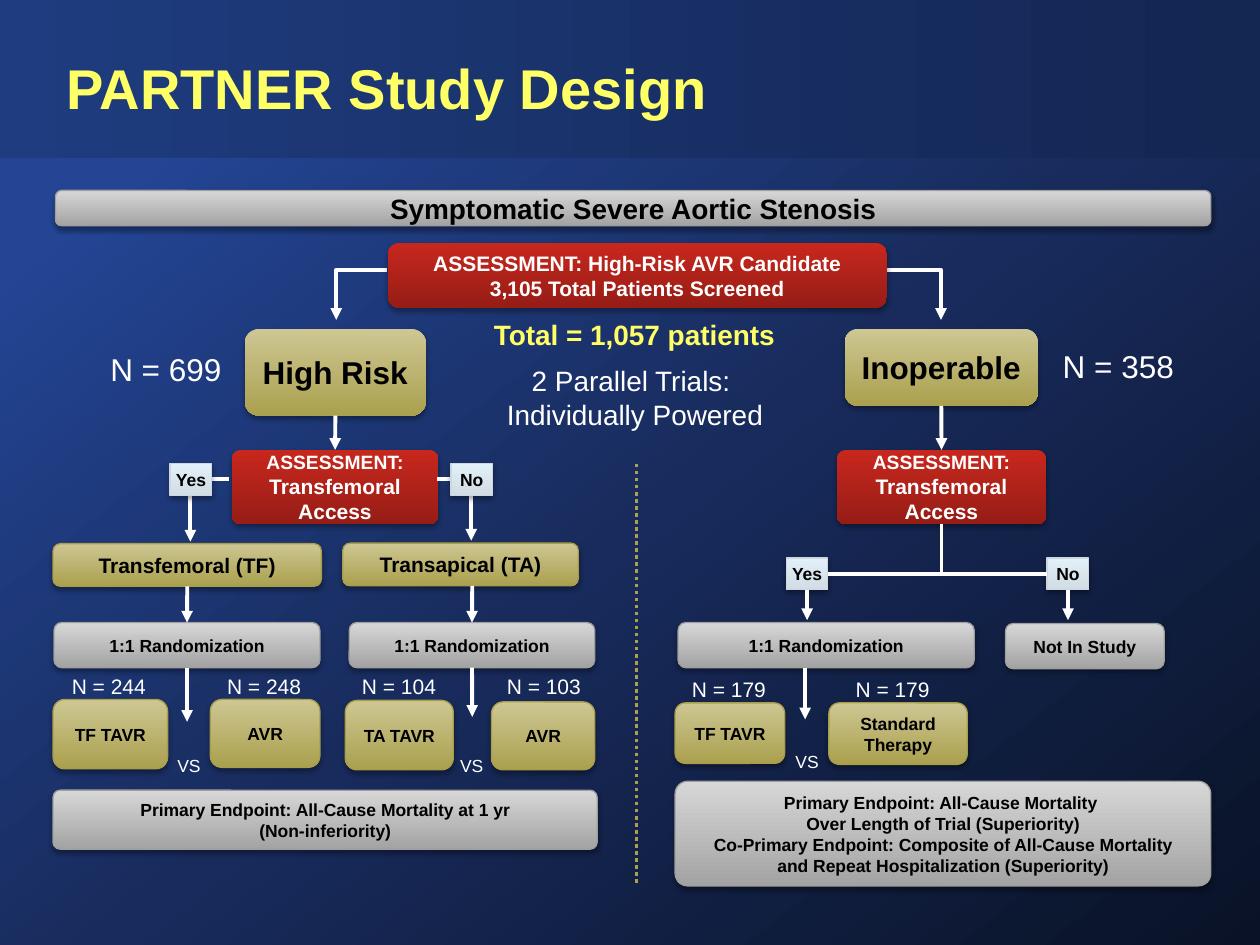
from lxml import etree
from pptx import Presentation
from pptx.dml.color import RGBColor
from pptx.enum import dml, shapes, text
from pptx.oxml.ns import qn
from pptx.util import Cm, Pt

COLORS = {
    "white": "FFFFFF", "black": "000000", "yellow": "FFFF66", "dots": "AAA04E",
    "gold_line": "A89E4A", "gray_line": "9F9F9F", "tag_line": "CED7DD",
}
# Gradient stops: position in percent, colour
GRADIENTS = {
    "back": [(14, "234594"), (53, "182B5C"), (100, "091226")],
    "band": [(0, "1E3C7F"), (100, "142652")],
    "gold": [(0, "CEC793"), (100, "AAA04E")],
    "gray": [(0, "D7D7D7"), (100, "A3A3A3")],
    "red": [(0, "C8271D"), (100, "961D16")],
    "tag": [(0, "E2F0F9"), (100, "D1DCE4")],
}
TOP, LEFT, BOTTOM, RIGHT = 0, 1, 2, 3


def rgb(name):
    return RGBColor.from_string(COLORS[name])


def sub(parent, tag, **attrs):
    return etree.SubElement(parent, qn(tag), {k: str(v) for k, v in attrs.items()})


class FlowSlide:
    font = "Arial"

    def __init__(self, slide):
        self.slide = slide

    def gradient(self, fill, owner, name, angle):
        fill.gradient()
        stops = next(owner.iter(qn("a:gsLst")))
        for old in list(stops):
            stops.remove(old)
        for pos, color in GRADIENTS[name]:
            sub(sub(stops, "a:gs", pos=pos * 1000), "a:srgbClr", val=color)
        next(owner.iter(qn("a:lin"))).set("ang", str(angle * 60000))

    def background(self):
        self.gradient(self.slide.background.fill, self.slide.element, "back", 52)
        sp = self.slide.shapes.add_shape(
            shapes.MSO_SHAPE.RECTANGLE, 0, 0, Cm(25.4), Cm(3.18))
        sp.shadow.inherit = False
        sp.line.fill.background()
        self.gradient(sp.fill, sp.element, "band", 0)
        self.slide.shapes.element.insert(2, sp.element)

    def style(self, p, size, color, bold):
        p.font.name, p.font.size, p.font.bold = self.font, Pt(size), bold
        p.font.color.rgb = rgb(color)

    def title(self, words, at):
        sp = self.slide.shapes.title
        sp.left, sp.top, sp.width, sp.height = map(Cm, at)
        tf = sp.text_frame
        tf.text = words
        tf.vertical_anchor = text.MSO_ANCHOR.MIDDLE
        p = tf.paragraphs[0]
        p.alignment, p.line_spacing = text.PP_ALIGN.LEFT, Pt(30)
        self.style(p, 32, "yellow", True)

    def set_text(self, sp, words, size, color, bold, side=0.25, lead=None):
        tf = sp.text_frame
        tf.word_wrap = True
        tf.vertical_anchor = text.MSO_ANCHOR.MIDDLE
        tf.margin_left = tf.margin_right = Cm(side)
        tf.text = words
        for p in tf.paragraphs:
            p.alignment = text.PP_ALIGN.CENTER
            self.style(p, size, color, bold)
        if lead:
            p = tf.paragraphs[0]
            p.runs[0].text, p.runs[0].font.size = lead
            p.add_run().text = words

    def box(self, words, at, fill, size=10, line=True, adj=0.17, side=0.25, lead=None):
        tag = fill == "tag"
        kind = shapes.MSO_SHAPE.RECTANGLE if tag else shapes.MSO_SHAPE.ROUNDED_RECTANGLE
        sp = self.slide.shapes.add_shape(kind, *map(Cm, at))
        if not tag:
            sp.adjustments[0] = adj
        self.gradient(sp.fill, sp.element, fill, 90)
        if line:
            sp.line.color.rgb, sp.line.width = rgb(fill + "_line"), Pt(0.75)
        else:
            sp.line.fill.background()
        sp.shadow.inherit = False
        shadow = sub(sp.element.spPr.find(qn("a:effectLst")), "a:outerShdw",
                     blurRad=Pt(3.1), dist=Pt(1.8), dir=5400000, rotWithShape=0)
        sub(sub(shadow, "a:srgbClr", val=COLORS["black"]), "a:alpha", val=35000)
        self.set_text(sp, words, size, "white" if fill == "red" else "black", True, side, lead)
        return sp

    def label(self, words, at, size=12, color="white", bold=False, side=0.25):
        sp = self.slide.shapes.add_textbox(*map(Cm, at))
        self.set_text(sp, words, size, color, bold, side)

    def line(self, points, start=None, end=None, arrow=True, bent=False,
             color="white", width=2.25, dash=None):
        kind = shapes.MSO_CONNECTOR.ELBOW if bent else shapes.MSO_CONNECTOR.STRAIGHT
        c = self.slide.shapes.add_connector(kind, *map(Cm, points))
        if bent:
            c.element.spPr.find(qn("a:prstGeom")).set("prst", "bentConnector2")
        if start:
            c.begin_connect(*start)
        if end:
            c.end_connect(*end)
        c.line.color.rgb, c.line.width = rgb(color), Pt(width)
        if dash:
            c.line.dash_style = dash
        if arrow:
            sub(c.get_or_add_ln(), "a:tailEnd", type="triangle")
        sub(c.element.spPr, "a:effectLst")


def main():
    prs = Presentation()
    prs.slide_width, prs.slide_height = Cm(25.4), Cm(19.05)
    s = FlowSlide(prs.slides.add_slide(prs.slide_layouts[5]))
    s.background()
    s.title("PARTNER Study Design", (1.09, 0.58, 17.7, 2.64))

    # Screening
    s.box("Symptomatic Severe Aortic Stenosis", (1.12, 3.84, 23.29, 0.71), "gray", 16)
    s.line((17.07, 5.44, 18.97, 6.45), bent=True)
    s.line((7.8, 5.44, 6.78, 6.45), bent=True)
    s.box("ASSESSMENT: High-Risk AVR Candidate\n3,105 Total Patients Screened",
          (7.82, 4.9, 10.06, 1.3), "red", 12, line=False)
    s.label("Total = 1,057 patients", (7.8, 6.22, 9.98, 1.04), 16, "yellow", True)
    s.label("2 Parallel Trials: \vIndividually Powered", (8.99, 7.34, 7.62, 1.35), 16)

    # Two cohorts and their access assessment
    access = []
    for name, at, left, width in (
            ("High Risk", (4.93, 6.63, 3.66, 1.75), 4.67, 4.17),
            ("Inoperable", (17.03, 6.63, 3.89, 1.55), 16.87, 4.22)):
        cohort = s.box(name, at, "gold", 18, line=False)
        access.append(s.box("Transfemoral Access", (left, 9.07, width, 1.5), "red", 12,
                            line=False, adj=0.12, lead=("ASSESSMENT: ", Pt(11))))
        s.line((0, 0, 0, 0), (cohort, BOTTOM), (access[-1], TOP))
    s.label("N = 699", (1.35, 6.86, 3.99, 1.14), 18)
    s.label("N = 358", (20.83, 6.81, 3.43, 1.14), 18)
    s.line((12.83, 9.35, 12.83, 17.83), arrow=False, color="dots", width=2,
           dash=dml.MSO_LINE.ROUND_DOT)

    # High-risk branches
    s.line((8.81, 9.65, 9.5, 10.9), bent=True)
    s.line((4.62, 9.65, 3.84, 10.92), bent=True)
    tf_arm = s.box("Transfemoral (TF)", (1.07, 10.96, 5.41, 0.86), "gold", 12)
    s.box("Transapical (TA)", (6.91, 10.95, 4.75, 0.86), "gold", 12)
    tf_random, ta_random, _ = [
        s.box("1:1 Randomization", (left, 12.55, width, 0.91), "gray")
        for left, width in ((1.09, 5.36), (7.04, 4.95), (13.67, 5.97))]
    s.line((0, 0, 0, 0), (tf_arm, BOTTOM), (tf_random, TOP))
    s.line((9.52, 11.81, 9.52, 12.55), end=(ta_random, TOP))
    s.line((3.77, 13.46, 3.77, 14.55), (tf_random, BOTTOM))
    s.line((9.52, 13.46, 9.52, 14.45), (ta_random, BOTTOM))

    # Inoperable branches
    s.box("Not In Study", (20.27, 12.57, 3.2, 0.91), "gray")
    s.line((18.98, 10.57, 18.98, 11.53), (access[1], BOTTOM), arrow=False)
    s.line((16.23, 13.46, 16.23, 14.5))

    # Yes / No tags
    tags = [s.box(words, (left, top, 0.84, 0.64), "tag", side=0)
            for words, left, top in (("Yes", 3.43, 9.35), ("No", 9.09, 9.35),
                                     ("Yes", 15.85, 11.25), ("No", 21.11, 11.25))]
    yes, no = tags[2:]
    s.line((0, 0, 0, 0), (yes, RIGHT), (no, LEFT), arrow=False)
    for tag, x in ((yes, 16.27), (no, 21.53)):
        s.line((x, 11.89, x, 12.5), (tag, BOTTOM))

    # Treatment arms
    for words, left, top, width, height in (
            ("TF TAVR", 1.07, 14.1, 2.31, 1.4), ("AVR", 4.24, 14.1, 2.21, 1.37),
            ("TA TAVR", 6.96, 14.12, 2.18, 1.4), ("AVR", 9.91, 14.15, 2.08, 1.37),
            ("TF TAVR", 13.61, 14.17, 2.21, 1.22),
            ("Standard\nTherapy", 16.71, 14.17, 2.79, 1.24)):
        s.box(words, (left, top, width, height), "gold", side=0.1)
    for count, left, top in ((244, 0.2, 13.41), (248, 3.33, 13.41), (104, 6.05, 13.41),
                             (103, 8.97, 13.41), (179, 12.7, 13.46), (179, 16, 13.46)):
        s.label(f"N = {count}", (left, top, 3.99, 0.86))
    for left, top in ((3.31, 15.04), (9.01, 15.04), (15.77, 14.96)):
        s.label("VS", (left, top, 1, 0.8), 10, side=0)

    # Endpoints
    s.box("Primary Endpoint: All-Cause Mortality at 1 yr\v(Non-inferiority)",
          (1.07, 15.93, 10.97, 1.19), "gray", adj=0.12)
    s.box("Primary Endpoint: All-Cause Mortality \vOver Length of Trial (Superiority)\n"
          "Co-Primary Endpoint: Composite of All-Cause Mortality\v"
          "and Repeat Hospitalization (Superiority)",
          (13.61, 15.75, 10.8, 2.11), "gray", adj=0.12)
    prs.save("out.pptx")


if __name__ == "__main__":
    main()
